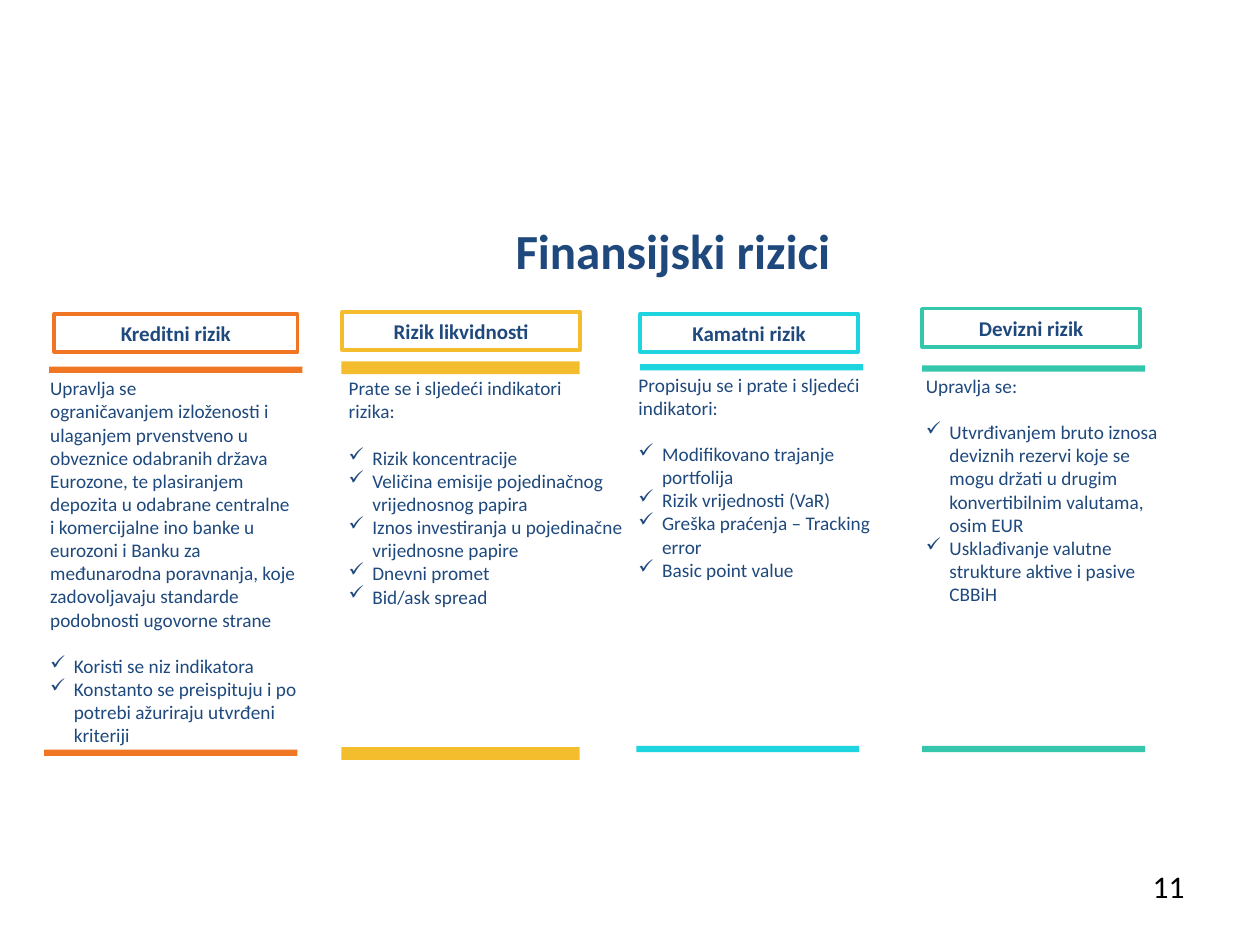
"""Build the slide on the four financial risks, one column per risk."""
import pptx
import pptx.dml.color
import pptx.enum.shapes
import pptx.enum.text
import pptx.oxml.ns
import pptx.util
from lxml import etree

Pt = pptx.util.Pt
RGBColor = pptx.dml.color.RGBColor
ALIGN = pptx.enum.text.PP_ALIGN
ANCHOR = pptx.enum.text.MSO_ANCHOR
RECT = pptx.enum.shapes.MSO_SHAPE.RECTANGLE
qn = pptx.oxml.ns.qn

NAVY = RGBColor(0x1F, 0x49, 0x7D)
BLACK = RGBColor(0, 0, 0)
WHITE = RGBColor(0xFF, 0xFF, 0xFF)
ORANGE = RGBColor(0xF0, 0x76, 0x24)
YELLOW = RGBColor(0xF4, 0xBD, 0x2D)
CYAN = RGBColor(0x1E, 0xD4, 0xDE)
GREEN = RGBColor(0x35, 0xC7, 0xAB)

COLUMNS = [
    dict(
        color=ORANGE, heading="Kreditni rizik", head_box=(31, 179.3, 139),
        body_box=(21.6, 211.7, 170.6, 273.6),
        bars=[(28.1, 209.5), (25.2, 428.4)], bar_size=(144.7, 3.6),
        intro="Upravlja se\nograničavanjem izloženosti i\nulaganjem prvenstveno u\n"
              "obveznice odabranih država\nEurozone, te plasiranjem\n"
              "depozita u odabrane centralne\ni komercijalne ino banke u\n"
              "eurozoni i Banku za\nmeđunarodna poravnanja, koje\n"
              "zadovoljavaju standarde\npodobnosti ugovorne strane",
        bullets=["Koristi se niz indikatora",
                 "Konstanto se preispituju i po\npotrebi ažuriraju utvrđeni\nkriteriji"]),
    dict(
        color=YELLOW, heading="Rizik likvidnosti", head_box=(195.5, 178.3, 136.1),
        body_box=(192.2, 211.7, 173.5, 220.3),
        bars=[(195.1, 206.6), (195.1, 427)], bar_size=(136.1, 7.2),
        intro="Prate se i sljedeći indikatori\nrizika:",
        bullets=["Rizik koncentracije",
                 "Veličina emisije pojedinačnog\nvrijednosnog papira",
                 "Iznos investiranja u pojedinačne vrijednosne papire",
                 "Dnevni promet", "Bid/ask spread"]),
    dict(
        color=CYAN, heading="Kamatni rizik", head_box=(365.8, 179.3, 124.6),
        body_box=(357.8, 209.5, 153.4, 167),
        bars=[(365.8, 208.1), (363.6, 426.2)], bar_size=(127.4, 3.6),
        intro="Propisuju se i prate i sljedeći\nindikatori:",
        bullets=["Modifikovano trajanje\nportfolija", "Rizik vrijednosti (VaR)",
                 "Greška praćenja – Tracking error", "Basic point value"]),
    dict(
        color=GREEN, heading="Devizni rizik", head_box=(527, 176.4, 124.6),
        body_box=(522, 210.2, 156.2, 140.4),
        bars=[(527, 208.8), (527, 426.2)], bar_size=(127.4, 3.6),
        intro="Upravlja se:",
        bullets=["Utvrđivanjem bruto iznosa\ndeviznih rezervi koje se\nmogu držati u drugim\n"
                 "konvertibilnim valutama,\nosim EUR",
                 "Usklađivanje valutne\nstrukture aktive i pasive\nCBBiH"]),
]


class Deck:
    """Hold the style and the current slide."""

    font, body_size, head_size = "Calibri", 11, 12
    line_height, indent = 13.3, 13.5

    def __init__(self):
        self.prs = pptx.Presentation()
        self.prs.slide_width, self.prs.slide_height = Pt(720), Pt(540)
        self.s = self.prs.slides.add_slide(self.prs.slide_layouts[5])

    def add_text(self, p, text, size, color=NAVY, bold=False, align=ALIGN.LEFT):
        """Fill a paragraph, breaking the line at each newline."""
        p.alignment = align
        for i, line in enumerate(text.split("\n")):
            if i:
                p.add_line_break()
            r = p.add_run()
            r.text = line
            f = r.font
            f.name, f.size, f.bold = self.font, Pt(size), bold
            f.color.rgb = color

    def title(self, text, box):
        """Move and fill the title placeholder."""
        sp = self.s.shapes.title
        sp.left, sp.top, sp.width, sp.height = map(Pt, box)
        sp.text_frame.vertical_anchor = ANCHOR.MIDDLE
        self.add_text(sp.text_frame.paragraphs[0], text, 28, bold=True, align=ALIGN.CENTER)

    def text_box(self, box):
        """Add a wrapping text box and return its frame."""
        tf = self.s.shapes.add_textbox(*map(Pt, box)).text_frame
        tf.word_wrap = True
        return tf

    def rect(self, box, fill, line=None):
        """Add a flat rectangle, outlined if a line colour is given."""
        sp = self.s.shapes.add_shape(RECT, *map(Pt, box))
        sp.shadow.inherit = False
        sp.fill.solid()
        sp.fill.fore_color.rgb = fill
        if line is None:
            sp.line.fill.background()
        else:
            sp.line.color.rgb = line
            sp.line.width = Pt(2)
        return sp

    def heading(self, text, box, color):
        """Add a framed column heading."""
        tf = self.rect(box, WHITE, color).text_frame
        tf.word_wrap = True
        tf.vertical_anchor = ANCHOR.MIDDLE
        self.add_text(tf.paragraphs[0], text, self.head_size, bold=True, align=ALIGN.CENTER)

    def bullet(self, p):
        """Give a paragraph a hanging check mark."""
        pPr = p._p.get_or_add_pPr()
        pPr.set("marL", str(Pt(self.indent)))
        pPr.set("indent", str(-Pt(self.indent)))
        etree.SubElement(pPr, qn("a:buChar")).set("char", "✓")

    def body(self, intro, bullets, box):
        """Add an introduction followed by a checked list."""
        tf = self.text_box(box)
        self.add_text(tf.paragraphs[0], intro, self.body_size)
        for i, text in enumerate(bullets):
            p = tf.add_paragraph()
            self.bullet(p)
            if i == 0:
                p.space_before = Pt(self.line_height)
            self.add_text(p, text, self.body_size)

    def column(self, color, heading, head_box, body_box, bars, bar_size, intro, bullets):
        """Add the heading, text and two bars of one risk."""
        self.heading(heading, (*head_box, 21.8), color)
        self.body(intro, bullets, body_box)
        for corner in bars:
            self.rect((*corner, *bar_size), color)

    def page_number(self, text, box):
        """Add the page number."""
        p = self.text_box(box).paragraphs[0]
        self.add_text(p, text, 18, BLACK, align=ALIGN.RIGHT)


def main():
    """Build and save the deck."""
    deck = Deck()
    deck.title("Finansijski rizici", (60.5, 117.4, 648, 51.1))
    for column in COLUMNS:
        deck.column(**column)
    deck.page_number("11", (516.2, 491.8, 167.8, 37.4))
    deck.prs.save("out.pptx")


if __name__ == "__main__":
    main()
